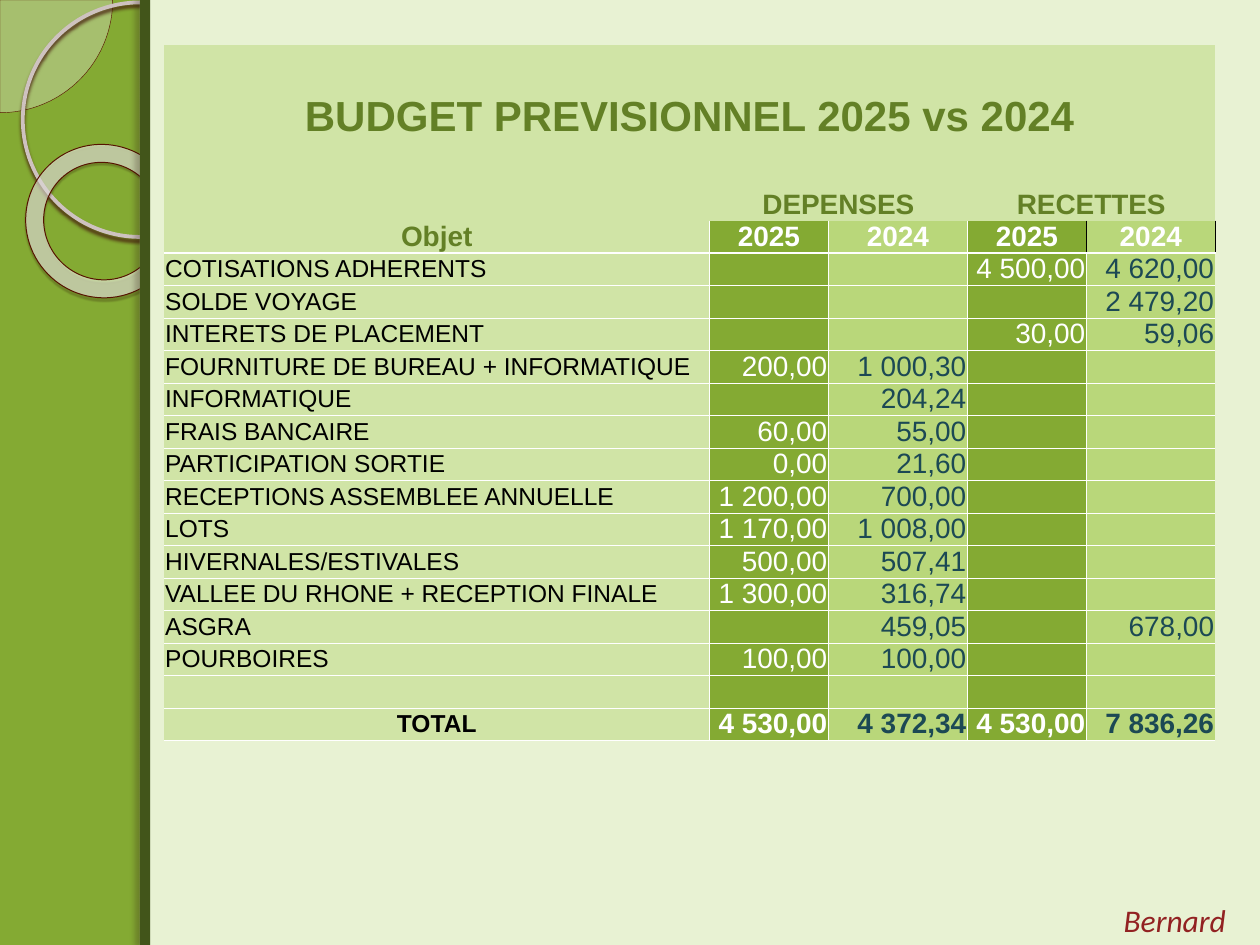
from lxml.etree import SubElement
from pptx import Presentation
from pptx.dml.color import RGBColor
from pptx.enum.shapes import MSO_SHAPE
from pptx.enum.text import MSO_ANCHOR, PP_ALIGN
from pptx.oxml.ns import qn
from pptx.util import Pt

WHITE = RGBColor(0xFF, 0xFF, 0xFF)
BLACK = RGBColor(0x00, 0x00, 0x00)
GREEN = RGBColor(0x84, 0xAA, 0x33)
MID_GREEN = RGBColor(0xB9, 0xD7, 0x7A)
LIGHT_GREEN = RGBColor(0xD0, 0xE4, 0xA6)
PALE_GREEN = RGBColor(0xE8, 0xF2, 0xD3)
DARK_GREEN = RGBColor(0x42, 0x55, 0x1A)
TITLE_GREEN = RGBColor(0x63, 0x80, 0x26)
TEAL = RGBColor(0x1C, 0x49, 0x54)
RED = RGBColor(0x92, 0x22, 0x22)
PIE_GREY = RGBColor(0xEC, 0xEA, 0xE9)
PIE_LINE = RGBColor(0x59, 0x15, 0x02)
RING_GREY = RGBColor(0xCE, 0xC2, 0xC0)
DONUT_GREY = RGBColor(0xF8, 0xF7, 0xF7)
DONUT_LINE = RGBColor(0x56, 0x12, 0x00)
RING_SHADOW = RGBColor(0x44, 0x17, 0x0B)
DONUT_SHADOW = RGBColor(0x26, 0x09, 0x01)
BAR_SHADOW = RGBColor(0x29, 0x13, 0x0D)


def add_decoration(kind, box, fill=None, alpha=100, line=None, width=0, shadow=None):
    shape = slide.shapes.add_shape(kind, *[Pt(length) for length in box])
    if fill is None:
        shape.fill.background()
    else:
        shape.fill.solid()
        shape.fill.fore_color.rgb = fill
        if alpha < 100:
            color = shape.fill._xPr.find(qn("a:solidFill"))[0]
            SubElement(color, qn("a:alpha"), val=str(alpha * 1000))
    if line is None:
        shape.line.fill.background()
    else:
        shape.line.color.rgb = line
        shape.line.width = Pt(width)
    shape.shadow.inherit = False
    if shadow:
        shadow_color, opacity, blur, distance, angle = shadow
        effects = shape._element.spPr.find(qn("a:effectLst"))
        outer = SubElement(effects, qn("a:outerShdw"), blurRad=str(Pt(blur)),
                           dist=str(Pt(distance)), dir=str(angle * 60000),
                           algn="ctr", rotWithShape="0")
        color = SubElement(outer, qn("a:srgbClr"), val=str(shadow_color))
        SubElement(color, qn("a:alpha"), val=str(opacity * 1000))
    return shape


def set_borders(cell, borders):
    properties = cell._tc.get_or_add_tcPr()
    for side in "LRTB":
        color, width = borders.get(side, (None, 0))
        border = SubElement(properties, qn(f"a:ln{side}"), w=str(Pt(width)))
        if color is None:
            SubElement(border, qn("a:noFill"))
        else:
            fill = SubElement(border, qn("a:solidFill"))
            SubElement(fill, qn("a:srgbClr"), val=str(color))


presentation = Presentation()
presentation.slide_width = Pt(720)
presentation.slide_height = Pt(540)
slide = presentation.slides.add_slide(presentation.slide_layouts[6])
slide.background.fill.solid()
slide.background.fill.fore_color.rgb = GREEN

pie = add_decoration(MSO_SHAPE.PIE, (-64.4, -64.4, 128.8, 128.8), PIE_GREY, 33, PIE_LINE, 0.25)
pie.adjustments[0] = 0
pie.adjustments[1] = 54
add_decoration(MSO_SHAPE.OVAL, (13, 1.4, 134, 134), line=RING_GREY, width=2.15,
               shadow=(RING_SHADOW, 85, 2, 2, 90))
donut = add_decoration(MSO_SHAPE.DONUT, (14.4, 82.8, 88.6, 87.1), DONUT_GREY, 57,
                       DONUT_LINE, 0.58, (DONUT_SHADOW, 35, 1, 1.2, 75))
donut.adjustments[0] = 0.118
donut.rotation = 38.6
add_decoration(MSO_SHAPE.RECTANGLE, (80, 0, 640, 540), PALE_GREEN)
add_decoration(MSO_SHAPE.RECTANGLE, (80, 0, 5.8, 540), DARK_GREEN,
               shadow=(BAR_SHADOW, 25, 3, 3, 180))

rows = [
    ("BUDGET PREVISIONNEL 2025 vs 2024", "", "", "", ""),
    ("", "DEPENSES", "", "RECETTES", ""),
    ("Objet", "2025", "2024", "2025", "2024"),
    ("COTISATIONS ADHERENTS", "", "", "4 500,00", "4 620,00"),
    ("SOLDE VOYAGE", "", "", "", "2 479,20"),
    ("INTERETS DE PLACEMENT", "", "", "30,00", "59,06"),
    ("FOURNITURE DE BUREAU + INFORMATIQUE", "200,00", "1 000,30", "", ""),
    ("INFORMATIQUE", "", "204,24", "", ""),
    ("FRAIS BANCAIRE", "60,00", "55,00", "", ""),
    ("PARTICIPATION SORTIE", "0,00", "21,60", "", ""),
    ("RECEPTIONS ASSEMBLEE ANNUELLE", "1 200,00", "700,00", "", ""),
    ("LOTS", "1 170,00", "1 008,00", "", ""),
    ("HIVERNALES/ESTIVALES", "500,00", "507,41", "", ""),
    ("VALLEE DU RHONE + RECEPTION FINALE", "1 300,00", "316,74", "", ""),
    ("ASGRA", "", "459,05", "", "678,00"),
    ("POURBOIRES", "100,00", "100,00", "", ""),
    ("", "", "", "", ""),
    ("TOTAL", "4 530,00", "4 372,34", "4 530,00", "7 836,26"),
]
column_widths = [311.7, 68, 79.4, 68, 73.7]
column_fills = [LIGHT_GREEN, GREEN, MID_GREEN, GREEN, MID_GREEN]
value_colors = [BLACK, WHITE, TEAL, WHITE, TEAL]
title_height, row_height = 81.5, 18.57
total_row = len(rows) - 1
thin, thick, dark = (WHITE, 0.5), (WHITE, 1.5), (BLACK, 0.5)

table = slide.shapes.add_table(len(rows), 5, Pt(93.7), Pt(26), Pt(sum(column_widths)),
                               Pt(title_height + row_height * total_row)).table
table.first_row = False
table.horz_banding = False
for column, width in zip(table.columns, column_widths):
    column.width = Pt(width)
for row in table.rows:
    row.height = Pt(row_height)
table.rows[0].height = Pt(title_height)
table.cell(0, 0).merge(table.cell(0, 4))
table.cell(1, 1).merge(table.cell(1, 2))
table.cell(1, 3).merge(table.cell(1, 4))

for row_index, texts in enumerate(rows):
    for column_index, text in enumerate(texts):
        cell = table.cell(row_index, column_index)
        borders = {}
        if row_index >= 2:
            borders["B"] = thick if row_index == 2 else thin
            if row_index > 2:
                borders["T"] = thick if row_index == 3 else thin
            if column_index > 0:
                borders["L"] = thin
            if column_index < 4:
                borders["R"] = thin
        if row_index == 2 and column_index >= 3:
            borders["R"] = dark
            if column_index == 4:
                borders["L"] = dark
        set_borders(cell, borders)
        cell.fill.solid()
        cell.fill.fore_color.rgb = column_fills[column_index] if row_index >= 2 else LIGHT_GREEN
        cell.margin_left = cell.margin_right = Pt(0.7)
        cell.margin_top = cell.margin_bottom = Pt(0)
        cell.vertical_anchor = MSO_ANCHOR.BOTTOM if row_index == 1 else MSO_ANCHOR.MIDDLE
        paragraph = cell.text_frame.paragraphs[0]
        if not text:
            paragraph._p.get_or_add_endParaRPr().set("sz", "1400")
            continue
        paragraph.text = text
        if row_index <= 2 or text == "TOTAL":
            paragraph.alignment = PP_ALIGN.CENTER
        elif column_index > 0:
            paragraph.alignment = PP_ALIGN.RIGHT
        font = paragraph.runs[0].font
        font.name = "Arial"
        font.bold = row_index <= 2 or row_index == total_row
        if row_index > 2:
            font.size = Pt(16 if column_index else 14)
            font.color.rgb = value_colors[column_index]
        else:
            font.size = Pt(16 if row_index else 24)
            font.color.rgb = WHITE if row_index == 2 and column_index else TITLE_GREEN

signature = slide.shapes.add_textbox(Pt(635), Pt(511.2), Pt(85), Pt(28.8))
signature.text_frame.word_wrap = True
signature.text_frame.text = "Bernard"
font = signature.text_frame.paragraphs[0].runs[0].font
font.name = "Calibri"
font.size = Pt(18)
font.italic = True
font.color.rgb = RED

presentation.save("out.pptx")
